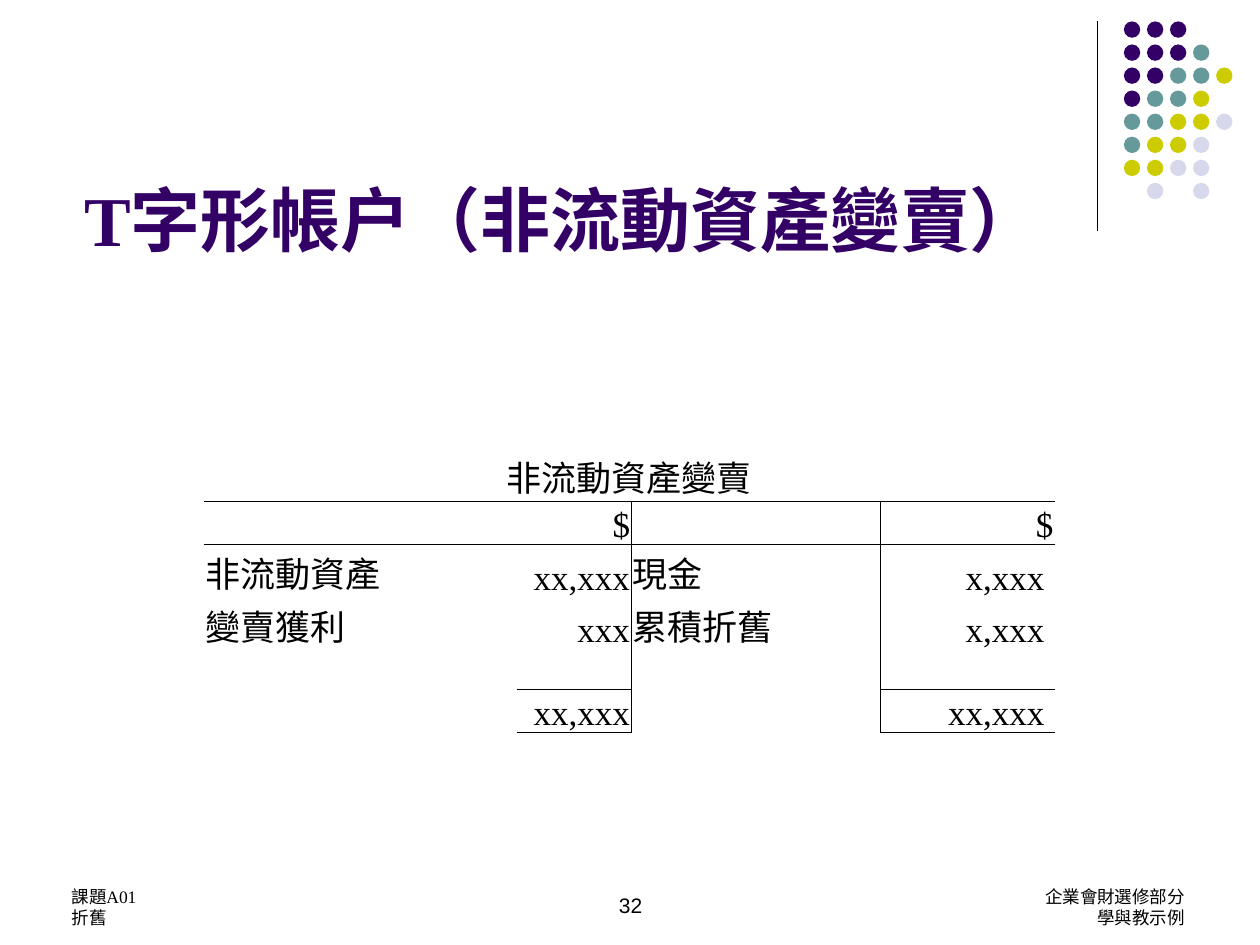
from dataclasses import dataclass
from typing import NamedTuple

from lxml import etree
from pptx import Presentation
from pptx.dml.color import RGBColor
from pptx.enum.shapes import MSO_CONNECTOR, MSO_SHAPE
from pptx.enum.text import MSO_ANCHOR, PP_ALIGN
from pptx.oxml.ns import qn
from pptx.util import Inches, Pt

LEFT, MID, RIGHT = PP_ALIGN.LEFT, PP_ALIGN.CENTER, PP_ALIGN.RIGHT
TOP, BASE = MSO_ANCHOR.TOP, MSO_ANCHOR.BOTTOM
OVAL, LINE = MSO_SHAPE.OVAL, MSO_CONNECTOR.STRAIGHT
WIDE, HIGH = Inches(10), Inches(7.5)
COLS, ROWS = 1000, 750
PLAIN = "{2D5ABB26-0587-4C30-8999-92F81FD0307C}"


@dataclass(frozen=True)
class Theme:
    ink: str = "000000"
    plum: str = "330066"
    teal: str = "669999"
    lime: str = "CCCC00"
    mist: str = "D8D8EC"
    sans: str = "Arial"
    serif: str = "Times New Roman"
    asian: str = "Noto Sans CJK TC"
    head: int = 40
    body: int = 20
    page: int = 12
    foot: int = 10
    rule: float = 0.75
    edge: float = 0.5


class Box(NamedTuple):
    left: float
    top: float
    width: float
    height: float


class Entry(NamedTuple):
    text: str = ""
    sides: str = ""
    align: PP_ALIGN = LEFT


THEME = Theme()
DOTS = ["PPP", "PPPT", "PPTTL", "PTTL", "TTLLM", "TLLM", "LLMM", " M M"]
HUES = {"P": THEME.plum, "T": THEME.teal, "L": THEME.lime, "M": THEME.mist}
WIDTHS = [248, 91, 198, 138]
HEIGHTS = [42, 32, 42, 42, 31, 32, 21]
LEDGER = [
    [Entry("非流動資產變賣", "B", MID)] + [Entry(sides="B")] * 3,
    [Entry(sides="T"), Entry("$", "RT", RIGHT), Entry(sides="LT"), Entry("$", "T", RIGHT)],
    [Entry("非流動資產"), Entry("xx,xxx", "R", RIGHT), Entry("現金", "L"), Entry(" x,xxx ", "", RIGHT)],
    [Entry("變賣獲利"), Entry("xxx", "R", RIGHT), Entry("累積折舊", "L"), Entry(" x,xxx ", "", RIGHT)],
    [Entry(), Entry(sides="RB"), Entry(sides="L"), Entry(sides="B")],
    [Entry(), Entry("xx,xxx", "RTB", RIGHT), Entry(sides="L"), Entry(" xx,xxx ", "TB", RIGHT)],
    [Entry(), Entry(sides="T"), Entry(), Entry(sides="T")],
]


def across(cols: float) -> int:
    return round(WIDE * cols / COLS)


def down(rows: float) -> int:
    return round(HIGH * rows / ROWS)


def place(box: Box) -> tuple[int, int, int, int]:
    return across(box.left), down(box.top), across(box.width), down(box.height)


def write(para, text: str, *, size: float, face: str = THEME.serif, hue: str = THEME.ink,
          bold: bool = False, align: PP_ALIGN = LEFT) -> None:
    para.alignment = align
    run = para.add_run()
    run.text = text
    font = run.font
    font.size, font.name, font.bold = Pt(size), face, bold
    font.color.rgb = RGBColor.from_string(hue)
    asian = etree.SubElement(font._element, qn("a:ea"))
    asian.set("typeface", THEME.asian)


def label(slide, box: Box, lines: list[list[tuple[str, str]]], *, head: float = 5, base: float = 5,
          anchor: MSO_ANCHOR = TOP, pitch: float | None = None, **style) -> None:
    frame = slide.shapes.add_textbox(*place(box)).text_frame
    frame.word_wrap = True
    frame.vertical_anchor = anchor
    frame.margin_top, frame.margin_bottom = down(head), down(base)
    for i, line in enumerate(lines):
        para = frame.add_paragraph() if i else frame.paragraphs[0]
        if pitch:
            para.line_spacing = Pt(pitch)
        for text, face in line:
            write(para, text, face=face, **style)


def rule(slide, left: float, top: float, base: float) -> None:
    line = slide.shapes.add_connector(LINE, across(left), down(top), across(left), down(base))
    line.line.color.rgb = RGBColor.from_string(THEME.ink)
    line.line.width = Pt(THEME.rule)
    etree.SubElement(line.element.spPr, qn("a:effectLst"))


def dots(slide, left: float, top: float, step: float, size: float) -> None:
    for row, marks in enumerate(DOTS):
        for col, mark in enumerate(marks):
            if mark not in HUES:
                continue
            box = Box(left + col * step, top + row * step, size, size)
            dot = slide.shapes.add_shape(OVAL, *place(box))
            dot.shadow.inherit = False
            dot.fill.solid()
            dot.fill.fore_color.rgb = RGBColor.from_string(HUES[mark])
            dot.line.fill.background()


def border(cell, side: str) -> None:
    line = etree.SubElement(cell._tc.get_or_add_tcPr(), qn(f"a:ln{side}"))
    line.set("w", str(Pt(THEME.edge)))
    fill = etree.SubElement(line, qn("a:solidFill"))
    etree.SubElement(fill, qn("a:srgbClr")).set("val", THEME.ink)


def fill_cell(cell, entry: Entry) -> None:
    cell.margin_left = cell.margin_right = across(1)
    cell.margin_top, cell.margin_bottom = down(1), 0
    cell.vertical_anchor = BASE
    for side in entry.sides:
        border(cell, side)
    cell.fill.background()
    para = cell.text_frame.paragraphs[0]
    if entry.text:
        write(para, entry.text, size=THEME.body, align=entry.align)
    else:
        end = etree.SubElement(para._p, qn("a:endParaRPr"))
        end.set("sz", str(THEME.foot * 100))


def ledger(slide, left: float, top: float) -> None:
    box = Box(left, top, sum(WIDTHS), sum(HEIGHTS))
    frame = slide.shapes.add_table(len(HEIGHTS), len(WIDTHS), *place(box))
    frame.element.find(".//" + qn("a:tableStyleId")).text = PLAIN
    table = frame.table
    table.first_row = table.horz_banding = False
    for col, width in zip(table.columns, WIDTHS):
        col.width = across(width)
    for row, height in zip(table.rows, HEIGHTS):
        row.height = down(height)
    table.cell(0, 0).merge(table.cell(0, len(WIDTHS) - 1))
    for i, row in enumerate(LEDGER):
        for j, entry in enumerate(row):
            fill_cell(table.cell(i, j), entry)


def main() -> None:
    deck = Presentation()
    deck.slide_width, deck.slide_height = WIDE, HIGH
    slide = deck.slides.add_slide(deck.slide_layouts[6])
    sans, serif, asian = THEME.sans, THEME.serif, THEME.asian

    rule(slide, 871, 17, 183)
    dots(slide, 892, 17, 18.3, 13)
    label(slide, Box(57, 134, 825, 142), [[("T", serif), ("字形帳戶（非流動資產變賣）", sans)]],
          base=69, anchor=BASE, size=THEME.head, hue=THEME.plum, bold=True)
    ledger(slide, 162, 356)
    label(slide, Box(47, 680, 233, 50), [[("課題A01", serif)], [("折舊", serif)]],
          head=23, pitch=12, size=THEME.foot)
    label(slide, Box(342, 683, 317, 50), [[("32", sans)]], head=25, size=THEME.page, align=MID)
    label(slide, Box(579, 680, 371, 50),
          [[("企業會財", sans), ("選修部分", asian)], [("學與教示例", sans)]],
          head=23, pitch=12, size=THEME.foot, align=RIGHT)
    deck.save("out.pptx")


if __name__ == "__main__":
    main()
